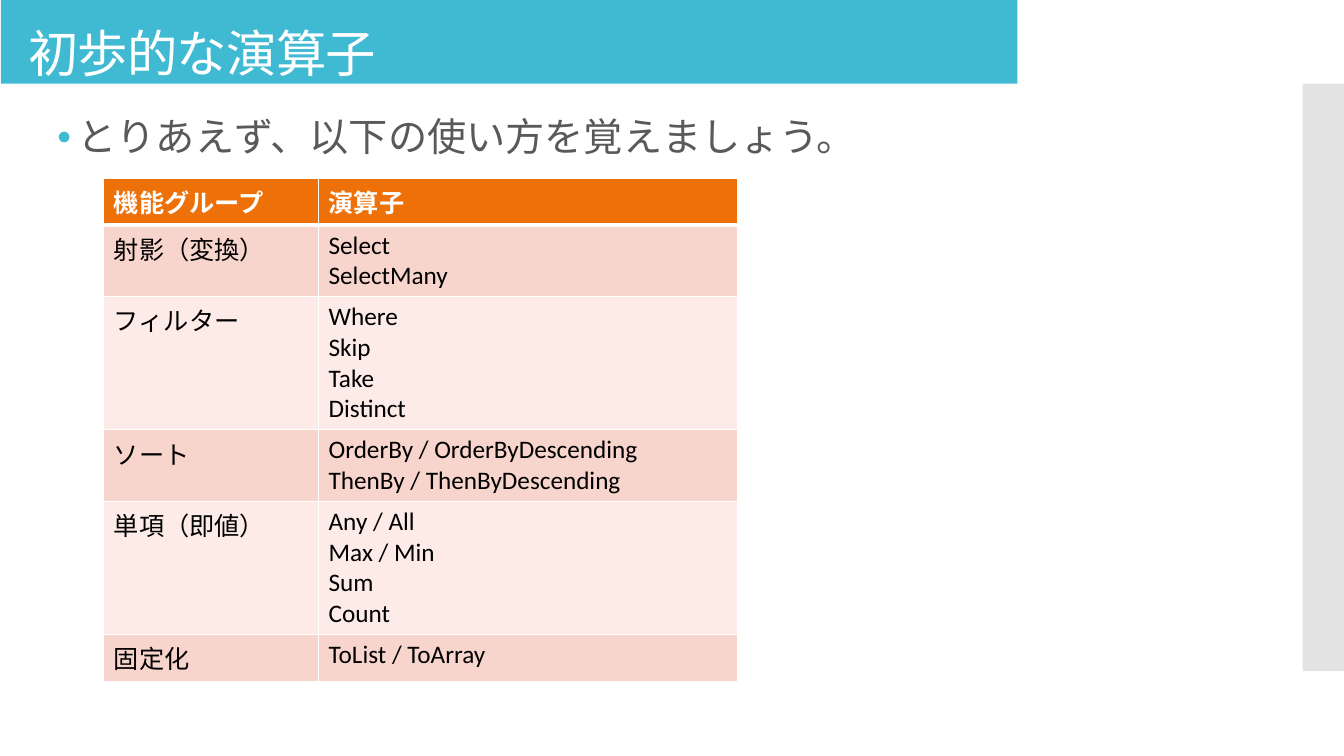
from lxml import etree
from pptx import Presentation
from pptx import util as u
from pptx.dml.color import RGBColor
from pptx.enum import shapes, text
from pptx.oxml import parse_xml
from pptx.oxml.ns import nsdecls, qn


def rgb(code):
    return RGBColor.from_string(code)


def style(para, size, color, bold=False):
    for run in para.runs:
        font = run.font
        font.name, font.size, font.bold = "Calibri", u.Pt(size), bold
        font.color.rgb = rgb(color)


prs = Presentation()
prs.slide_width, prs.slide_height = u.Inches(13.33), u.Inches(7.5)
slide = prs.slides.add_slide(prs.slide_layouts[1])
tree = slide.shapes

# Background bars, behind the placeholders
bars = [("40BAD2", (0.01, 0, 10.08, 0.83)), ("C8C8C8", (12.92, 0.83, 0.42, 5.83))]
for i, (color, box) in enumerate(bars):
    bar = tree.add_shape(shapes.MSO_SHAPE.RECTANGLE, *map(u.Inches, box))
    bar.shadow.inherit = False
    bar.fill.solid()
    bar.fill.fore_color.rgb = rgb(color)
    bar.line.fill.background()
    tree._spTree.insert(2 + i, bar._element)
tint = bar._element.spPr.find(".//" + qn("a:srgbClr"))
etree.SubElement(tint, qn("a:alpha"), val="50000")

# Title and lead line
title, body = tree.title, slide.placeholders[1]
heads = [
    (title, (0.18, 0.14, 12.48, 0.83), "初歩的な演算子", 36, "FFFFFF"),
    (body, (0.47, 1.12, 12.45, 0.52), "とりあえず、以下の使い方を覚えましょう。", 28, "595959"),
]
for shape, box, words, size, color in heads:
    shape.left, shape.top, shape.width, shape.height = map(u.Inches, box)
    frame = shape.text_frame
    frame.text = words
    frame.word_wrap = True
    frame.auto_size = text.MSO_AUTO_SIZE.NONE
    para = frame.paragraphs[0]
    para.alignment = text.PP_ALIGN.LEFT
    para.line_spacing = 0.9
    style(para, size, color)
title.text_frame.vertical_anchor = text.MSO_ANCHOR.MIDDLE
title.text_frame.paragraphs[0].runs[0].font._element.set("spc", "-60")

# Bullet of the lead line
para.space_before = u.Pt(12)
props = para._p.get_or_add_pPr()
props.set("marL", str(u.Inches(0.2)))
props.set("indent", str(-u.Inches(0.2)))
for xml in (
    '<a:buClr {}><a:srgbClr val="40BAD2"/></a:buClr>',
    '<a:buFont {} typeface="Arial"/>',
    '<a:buChar {} char="•"/>',
):
    props.append(parse_xml(xml.format(nsdecls("a"))))

# Operator table
rows = [
    ("機能グループ", "演算子"),
    ("射影（変換）", "Select\nSelectMany"),
    ("フィルター", "Where\nSkip\nTake\nDistinct"),
    ("ソート", "OrderBy / OrderByDescending\nThenBy / ThenByDescending"),
    ("単項（即値）", "Any / All\nMax / Min\nSum\nCount"),
    ("固定化", "ToList / ToArray"),
]
box = (1.03, 1.77, 6.29, 4.81)
grid = tree.add_table(len(rows), 2, *map(u.Inches, box))
table = grid.table
for col, width in zip(table.columns, (2.13, 4.16)):
    col.width = u.Inches(width)
for r, row in enumerate(rows):
    table.rows[r].height = u.Inches(0.41)
    fill = ("FCEBE7", "F8D5CC")[r % 2] if r else "EE7008"
    for c, words in enumerate(row):
        cell = table.cell(r, c)
        cell.text_frame.text = words
        for para in cell.text_frame.paragraphs:
            style(para, 18, "000000" if r else "FFFFFF", r == 0)
        # White borders, thicker around the header's lower edge
        props = cell._tc.get_or_add_tcPr()
        for side in "LRTB":
            thick = (r, side) in ((0, "B"), (1, "T"))
            props.append(parse_xml(
                f'<a:ln{side} {nsdecls("a")} w="{u.Pt(3 if thick else 1)}">'
                f'<a:solidFill><a:srgbClr val="FFFFFF"/></a:solidFill></a:ln{side}>'))
        cell.fill.solid()
        cell.fill.fore_color.rgb = rgb(fill)
grid.height = u.Inches(4.81)

prs.save("out.pptx")
